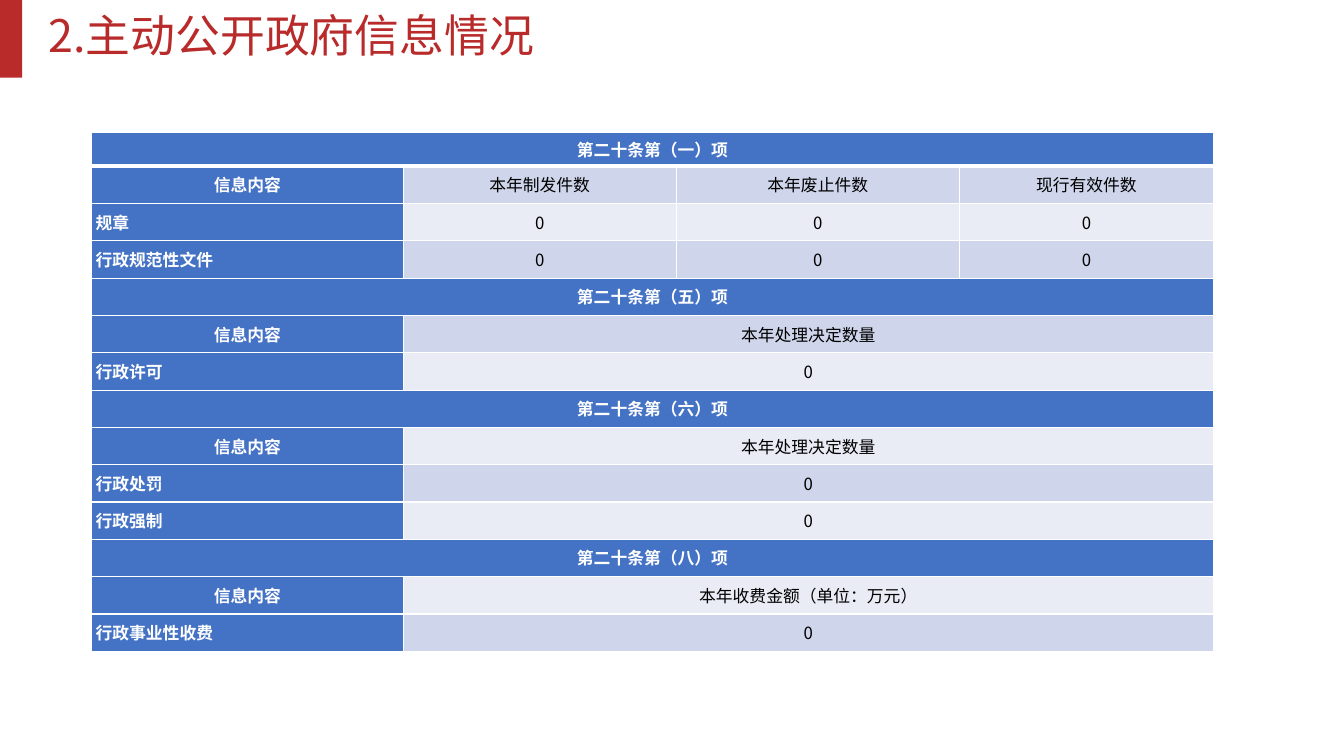
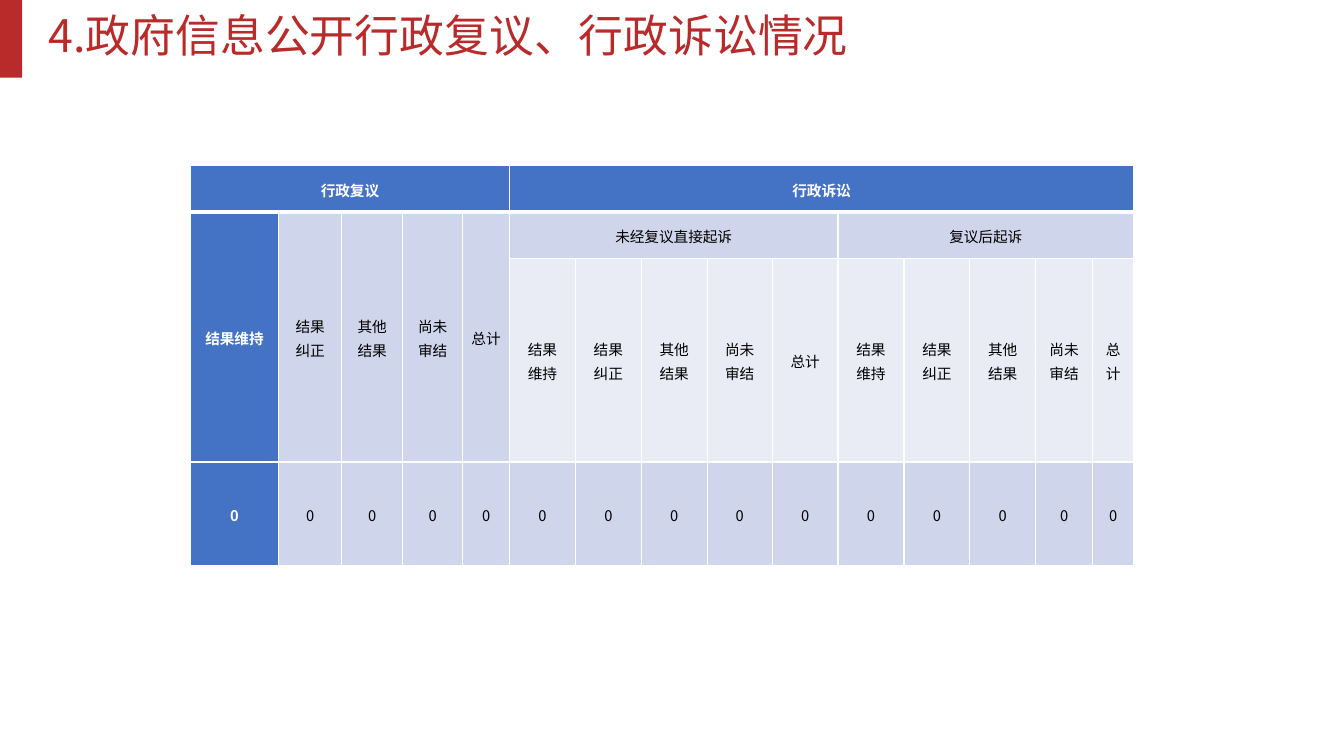
import pptx
import pptx.dml.color
import pptx.enum.shapes
import pptx.enum.text
import pptx.oxml.ns
import pptx.util
from lxml import etree
from pptx.util import Cm, Pt

FONT = "Noto Sans CJK SC"
RED, BLUE, WHITE, BLACK = "B82B2A", "4472C4", "FFFFFF", "000000"
BANDS = ("E9EBF5", "CFD5EA")
ALIGN = pptx.enum.text.PP_ALIGN
ANCHOR = pptx.enum.text.MSO_ANCHOR
qn = pptx.oxml.ns.qn


def color(value):
    return pptx.dml.color.RGBColor.from_string(value)


def style_runs(para, size, value, bold):
    for span in para.runs:
        span.font.size = Pt(size)
        span.font.bold = bold
        span.font.name = FONT
        span.font.color.rgb = color(value)
        east_asian = etree.Element(qn("a:ea"), typeface=FONT)
        span.font._element.find(qn("a:latin")).addnext(east_asian)


outcomes = ["结果\v维持", "结果\v纠正", "其他\v结果", "尚未\v审结", "总计"]
pages = [
    {
        "title": "2.主动公开政府信息情况",
        "title_width": 12.8,
        "left": 2.31,
        "top": 3.33,
        "columns": [7.85, 6.88, 7.14, 6.4],
        "rows": [0.86] + [0.94] * 13,
        "size": 12,
        "inset": 0.1,
        "left_rows": {2, 3, 6, 9, 10, 13},
        "texts": [
            ["第二十条第（一）项"],
            ["信息内容", "本年制发件数", "本年废止件数", "现行有效件数"],
            ["规章", "0", "0", "0"],
            ["行政规范性文件", "0", "0", "0"],
            ["第二十条第（五）项"],
            ["信息内容", "本年处理决定数量"],
            ["行政许可", "0"],
            ["第二十条第（六）项"],
            ["信息内容", "本年处理决定数量"],
            ["行政处罚", "0"],
            ["行政强制", "0"],
            ["第二十条第（八）项"],
            ["信息内容", "本年收费金额（单位：万元）"],
            ["行政事业性收费", "0"],
        ],
        "merges": [(row, 0, row, 3) for row in (0, 4, 7, 11)]
        + [(row, 1, row, 3) for row in (5, 6, 8, 9, 10, 12, 13)],
    },
    {
        "title": "4.政府信息公开行政复议、行政诉讼情况",
        "title_width": 20.7,
        "left": 4.8,
        "top": 4.17,
        "columns": [2.22, 1.59, 1.54, 1.51, 1.18, 1.66, 1.66, 1.66, 1.64, 1.66,
                    1.66, 1.66, 1.66, 1.43, 1.04],
        "rows": [1.17, 1.17, 5.13, 2.62],
        "size": 10.5,
        "inset": 0.18,
        "left_rows": set(),
        "texts": [
            ["行政复议"] + [""] * 4 + ["行政诉讼"],
            ["结果维持"] + outcomes[1:] + ["未经复议直接起诉"] + [""] * 4 + ["复议后起诉"],
            [""] * 5 + outcomes * 2,
            ["0"] * 15,
        ],
        "merges": [(0, 0, 0, 4), (0, 5, 0, 14), (1, 5, 1, 9), (1, 10, 1, 14)]
        + [(1, column, 2, column) for column in range(5)],
    },
]

deck = pptx.Presentation()
deck.slide_width, deck.slide_height = Cm(33.87), Cm(19.05)

for content in pages:
    page = deck.slides.add_slide(deck.slide_layouts[5])

    title = page.shapes.title
    title.left, title.top = Cm(0.97), Cm(0.28)
    title.width, title.height = Cm(content["title_width"]), Cm(1.63)
    frame = title.text_frame
    frame.text = content["title"]
    frame.word_wrap = True
    frame.auto_size = pptx.enum.text.MSO_AUTO_SIZE.NONE
    frame.vertical_anchor = ANCHOR.TOP
    para = frame.paragraphs[0]
    para.alignment = ALIGN.LEFT
    para.line_spacing = 0.85
    style_runs(para, 32, RED, False)

    bar = page.shapes.add_shape(
        pptx.enum.shapes.MSO_SHAPE.RECTANGLE, 0, 0, Cm(0.56), Cm(1.96))
    bar.shadow.inherit = False
    bar.fill.solid()
    bar.fill.fore_color.rgb = color(RED)
    bar.line.fill.background()

    columns, rows = content["columns"], content["rows"]
    table = page.shapes.add_table(
        len(rows), len(columns), Cm(content["left"]), Cm(content["top"]),
        Cm(sum(columns)), Cm(sum(rows))).table
    for column, width in enumerate(columns):
        table.columns[column].width = Cm(width)
    for row, height in enumerate(rows):
        table.rows[row].height = Cm(height)
    for top, left, bottom, right in content["merges"]:
        table.cell(top, left).merge(table.cell(bottom, right))

    for row, texts in enumerate(content["texts"]):
        for column in range(len(columns)):
            cell = table.cell(row, column)
            is_header = row == 0 or column == 0 or table.cell(row, 0).span_width == len(columns)
            cell.text_frame.text = ""
            if column < len(texts):
                cell.text_frame.paragraphs[0].text = texts[column]
            cell.margin_left = cell.margin_right = Cm(content["inset"])
            cell.margin_top = cell.margin_bottom = 0
            cell.vertical_anchor = ANCHOR.MIDDLE

            widths = {"lnL": 1, "lnR": 1, "lnT": 3 if row == 1 else 1, "lnB": 3 if row == 0 else 1}
            properties = cell._tc.get_or_add_tcPr()
            for side, points in widths.items():
                line = etree.SubElement(properties, qn("a:" + side), w=str(Pt(points)))
                fill = etree.SubElement(line, qn("a:solidFill"))
                etree.SubElement(fill, qn("a:srgbClr"), val=WHITE)
            cell.fill.solid()
            cell.fill.fore_color.rgb = color(BLUE if is_header else BANDS[row % 2])

            para = cell.text_frame.paragraphs[0]
            is_left = column == 0 and row in content["left_rows"]
            para.alignment = ALIGN.LEFT if is_left else ALIGN.CENTER
            para.line_spacing = Pt(17)
            style_runs(para, content["size"], WHITE if is_header else BLACK, is_header)

deck.save("out.pptx")
